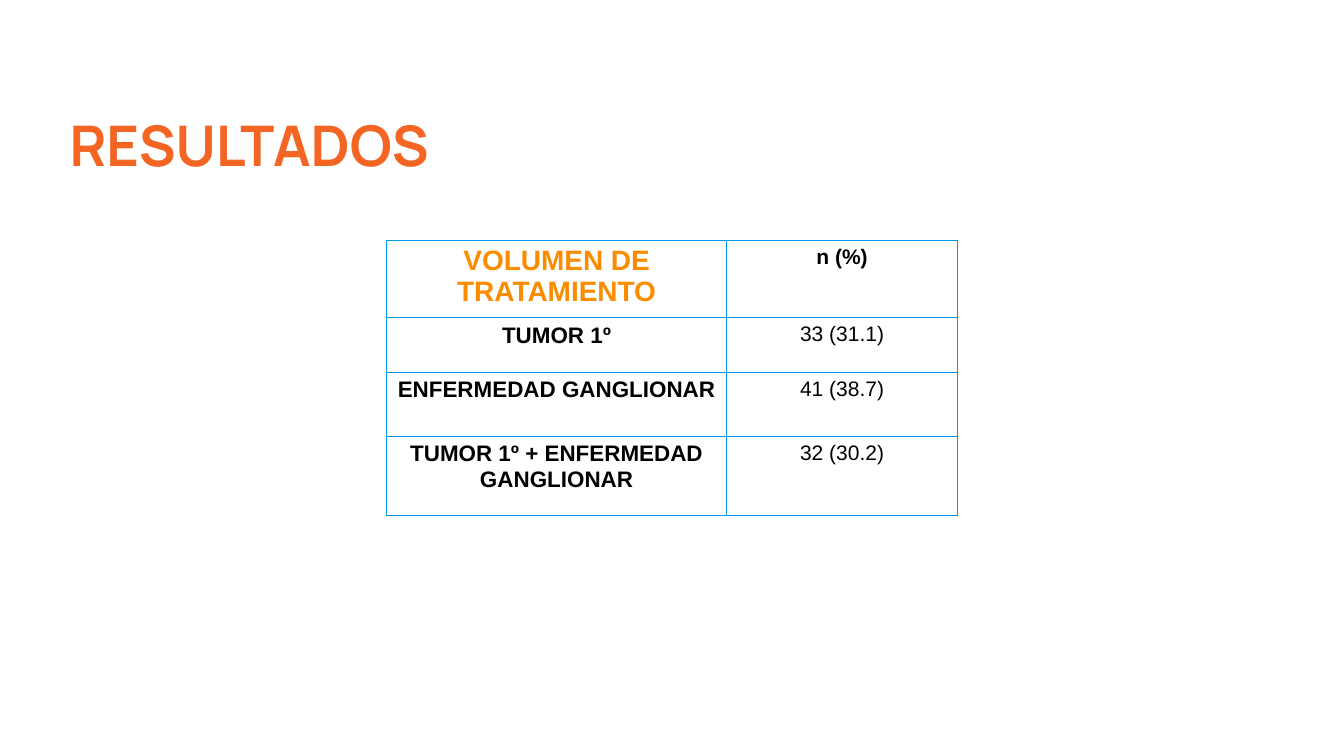
from typing import NamedTuple

from lxml.etree import SubElement
from pptx import Presentation
from pptx.dml.color import RGBColor
from pptx.enum.text import MSO_ANCHOR, PP_ALIGN
from pptx.oxml.ns import qn
from pptx.util import Inches, Pt

ORANGE = "F46524"
AMBER = "FB8C00"
BLACK = "000000"
BORDER_BLUE = "0099E8"


class ResultRow(NamedTuple):
    volume: str
    count: str
    height: float


HEADER = ResultRow("VOLUMEN DE TRATAMIENTO", "n (%)", 1.53)
RESULTS = [
    ResultRow("TUMOR 1º", "33 (31.1)", 1.09),
    ResultRow("ENFERMEDAD GANGLIONAR", "41 (38.7)", 1.27),
    ResultRow("TUMOR 1º + ENFERMEDAD GANGLIONAR", "32 (30.2)", 1.57),
]
COLUMN_WIDTHS = [6.75, 4.58]


def color(value: str) -> RGBColor:
    return RGBColor.from_string(value)


def write_text(text_frame, text: str, *, size: float, font: str = "Arial",
               fill: str = BLACK, bold: bool = False,
               align=PP_ALIGN.CENTER, line_spacing: float = 1.0) -> None:
    paragraph = text_frame.paragraphs[0]
    paragraph.alignment = align
    paragraph.line_spacing = line_spacing
    run = paragraph.add_run()
    run.text = text
    run.font.name = font
    run.font.size = Pt(size)
    run.font.bold = bold
    run.font.color.rgb = color(fill)


def set_margins(target, margin: float) -> None:
    """Set equal margins on a text frame or a table cell."""
    target.margin_left = target.margin_right = Inches(margin)
    target.margin_top = target.margin_bottom = Inches(margin)


def style_cell(cell) -> None:
    """Give a cell no fill, equal margins and a blue border on all sides."""
    set_margins(cell, 0.1)
    cell.vertical_anchor = MSO_ANCHOR.TOP
    properties = cell._tc.get_or_add_tcPr()
    for side in ("a:lnL", "a:lnR", "a:lnT", "a:lnB"):
        line = SubElement(properties, qn(side), w=str(Pt(2.25)))
        solid = SubElement(line, qn("a:solidFill"))
        SubElement(solid, qn("a:srgbClr"), val=BORDER_BLUE)
    cell.fill.background()


def add_title(slide, text: str) -> None:
    title = slide.shapes.add_textbox(
        Inches(1.32), Inches(-1.51), Inches(24.03), Inches(5.08))
    text_frame = title.text_frame
    text_frame.word_wrap = True
    text_frame.vertical_anchor = MSO_ANCHOR.BOTTOM
    set_margins(text_frame, 0.06)
    write_text(text_frame, text, size=80, font="Manrope", fill=ORANGE,
               bold=True, align=PP_ALIGN.LEFT, line_spacing=0.8)


def add_results_table(slide) -> None:
    rows = [HEADER, *RESULTS]
    table = slide.shapes.add_table(
        len(rows), len(COLUMN_WIDTHS), Inches(7.67), Inches(4.77),
        Inches(sum(COLUMN_WIDTHS)), Inches(sum(row.height for row in rows))).table
    table.first_row = table.horz_banding = False
    for column, width in zip(table.columns, COLUMN_WIDTHS):
        column.width = Inches(width)
    for index, row in enumerate(rows):
        is_header = row is HEADER
        table.rows[index].height = Inches(row.height)
        volume_cell, count_cell = table.rows[index].cells
        style_cell(volume_cell)
        style_cell(count_cell)
        write_text(volume_cell.text_frame, row.volume, bold=True,
                   size=40 if is_header else 32,
                   fill=AMBER if is_header else BLACK)
        write_text(count_cell.text_frame, row.count, size=30, bold=is_header)


def main() -> None:
    presentation = Presentation()
    presentation.slide_width = Inches(26.67)
    presentation.slide_height = Inches(15)
    slide = presentation.slides.add_slide(presentation.slide_layouts[6])
    add_title(slide, "RESULTADOS")
    add_results_table(slide)
    presentation.save("out.pptx")


if __name__ == "__main__":
    main()
